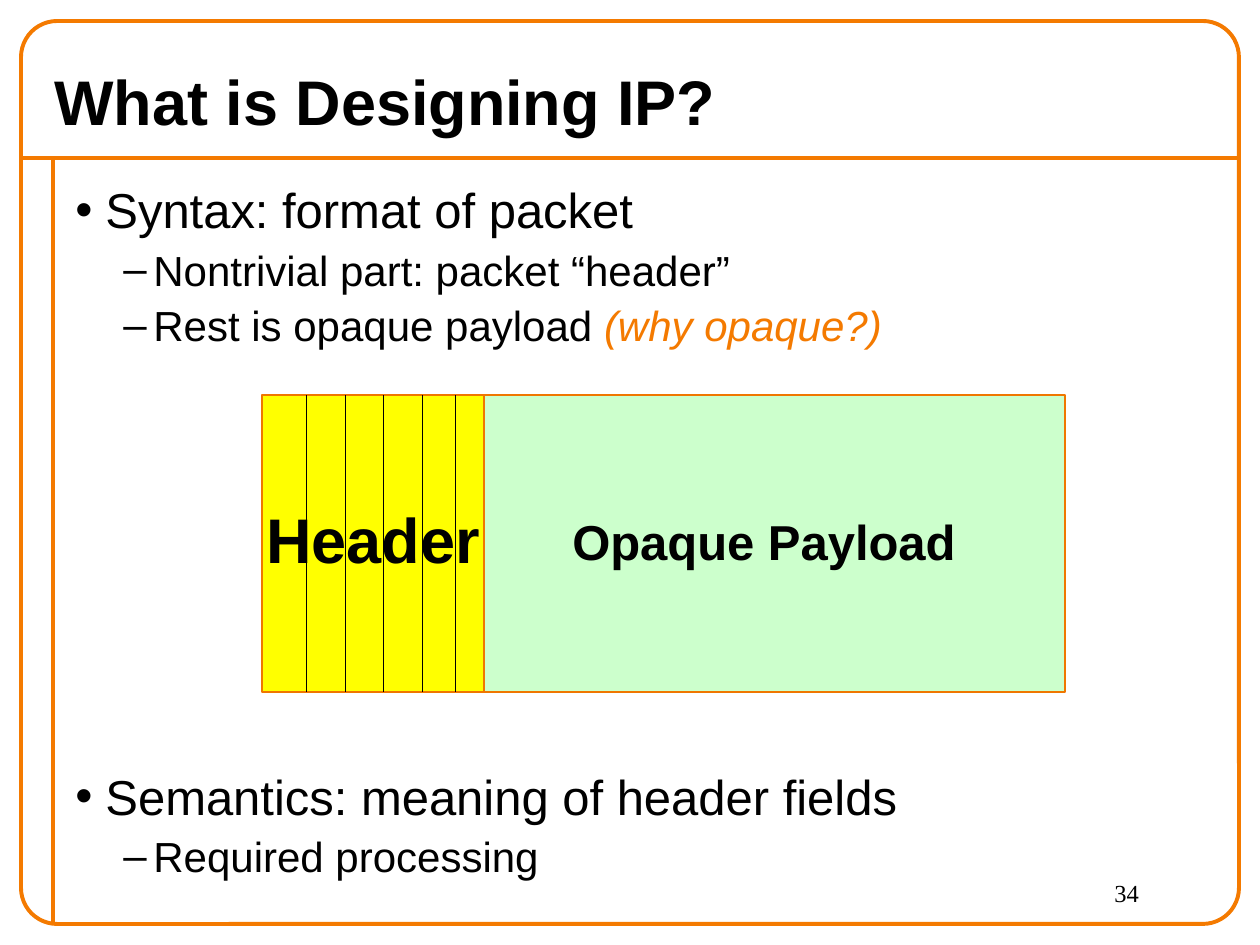
from lxml import etree
from pptx import Presentation
from pptx import util as u
from pptx.dml.color import RGBColor
from pptx.enum import dml, shapes, text
from pptx.oxml import ns

PX = 914400 / 126
COLORS = {
    "ink": "000000",
    "frame": "F47A00",
    "packet_line": "EF7700",
    "header": "FFFF00",
    "payload": "CCFFCC",
}
# bullet, text indent in px, font size, space before in points
LEVELS = {"main": ("•", 30, 28, 0), "sub": ("–", 78, 24, 3)}
HANGING = 30


def px(length):
    return u.Emu(round(length * PX))


def rgb(name):
    return RGBColor.from_string(COLORS[name])


def add_run(paragraph, words, size, color="ink", font="Arial", bold=False, italic=False):
    run = paragraph.add_run()
    run.text = words
    run.font.size = u.Pt(size)
    run.font.name = font
    run.font.bold = bold
    run.font.italic = italic
    run.font.color.rgb = rgb(color)


def add_frame(slide, box, top_inset=6, anchor=text.MSO_ANCHOR.TOP):
    frame = slide.shapes.add_textbox(*map(px, box)).text_frame
    frame.word_wrap = True
    frame.vertical_anchor = anchor
    frame.margin_top = px(top_inset)
    return frame


def add_text(slide, box, words, align=text.PP_ALIGN.LEFT,
             anchor=text.MSO_ANCHOR.MIDDLE, **style):
    paragraph = add_frame(slide, box, anchor=anchor).paragraphs[0]
    paragraph.alignment = align
    add_run(paragraph, words, **style)


def add_line(slide, start, end, color, width, dash=None):
    line = slide.shapes.add_connector(
        shapes.MSO_CONNECTOR.STRAIGHT, *map(px, (*start, *end)))
    line.line.color.rgb = rgb(color)
    line.line.width = u.Pt(width)
    if dash:
        line.line.dash_style = dash
    etree.SubElement(line._element.spPr, ns.qn("a:effectLst"))


def add_box(slide, kind, box, line, width, fill=None):
    shape = slide.shapes.add_shape(kind, *map(px, box))
    shape.shadow.inherit = False
    shape.line.color.rgb = rgb(line)
    shape.line.width = u.Pt(width)
    if fill:
        shape.fill.solid()
        shape.fill.fore_color.rgb = rgb(fill)
    else:
        shape.fill.background()
    return shape


def draw_border(slide, box):
    left, top, width, height = box
    title_rule = top + 137
    margin_rule = left + 32
    add_line(slide, (left, title_rule), (left + width, title_rule), "frame", 2.25)
    add_line(slide, (margin_rule, title_rule), (margin_rule, top + height), "frame", 2.25)
    border = add_box(slide, shapes.MSO_SHAPE.ROUNDED_RECTANGLE, box, "frame", 2.25)
    border.adjustments[0] = 0.04


def add_bullet(paragraph, level, *runs, gap=None):
    """Format one list entry; runs are (words, style) pairs and gap is in points."""
    mark, indent, size, space = LEVELS[level]
    paragraph.level = list(LEVELS).index(level)
    paragraph.space_before = u.Pt(space if gap is None else gap)
    properties = paragraph._p.get_or_add_pPr()
    properties.set("marL", str(px(indent)))
    properties.set("indent", str(-px(HANGING)))
    etree.SubElement(properties, ns.qn("a:buFont"), typeface="Arial")
    etree.SubElement(properties, ns.qn("a:buChar"), char=mark)
    for words, style in runs:
        add_run(paragraph, words, size, **style)


def draw_points(slide, box):
    frame = add_frame(slide, box, top_inset=12)
    add_bullet(frame.paragraphs[0], "main", ("Syntax: format of packet", {}))
    add_bullet(frame.add_paragraph(), "sub", ("Nontrivial part: packet “header”", {}))
    add_bullet(frame.add_paragraph(), "sub", ("Rest is opaque payload ", {}),
               ("(why opaque?)", {"color": "frame", "italic": True}))
    # The gap leaves room for the packet diagram
    add_bullet(frame.add_paragraph(), "main",
               ("Semantics: meaning of header fields", {}), gap=238)
    add_bullet(frame.add_paragraph(), "sub", ("Required processing", {}))


def draw_packet(slide, box):
    left, top, width, height = box
    header_width = 222
    payload_left = left + header_width
    for part, part_left, part_width in (
            ("header", left, header_width),
            ("payload", payload_left, width - header_width)):
        add_box(slide, shapes.MSO_SHAPE.RECTANGLE, (part_left, top, part_width, height),
                "packet_line", 0.75, part)
    add_text(slide, (left - 10, top + 98, 242, 90), "Header",
             align=text.PP_ALIGN.CENTER, size=36, bold=True)
    add_text(slide, (payload_left + 24, top + 110, 512, 72), "Opaque Payload",
             align=text.PP_ALIGN.CENTER, size=28, bold=True)
    for field_end in (44, 83, 121, 160, 193):
        x = left + field_end
        add_line(slide, (x, top), (x, top + height), "ink", 0.25,
                 dml.MSO_LINE.ROUND_DOT)


def main():
    deck = Presentation()
    deck.slide_width, deck.slide_height = px(1260), px(945)
    slide = deck.slides.add_slide(deck.slide_layouts[6])
    draw_border(slide, (21, 21, 1218, 903))
    add_text(slide, (42, 53, 1197, 94), "What is Designing IP?", size=36, bold=True)
    draw_points(slide, (63, 168, 1166, 756))
    add_text(slide, (1102, 872, 126, 53), "34", anchor=text.MSO_ANCHOR.TOP,
             size=14, font="Times New Roman")
    draw_packet(slide, (262, 395, 803, 297))
    deck.save("out.pptx")


if __name__ == "__main__":
    main()
